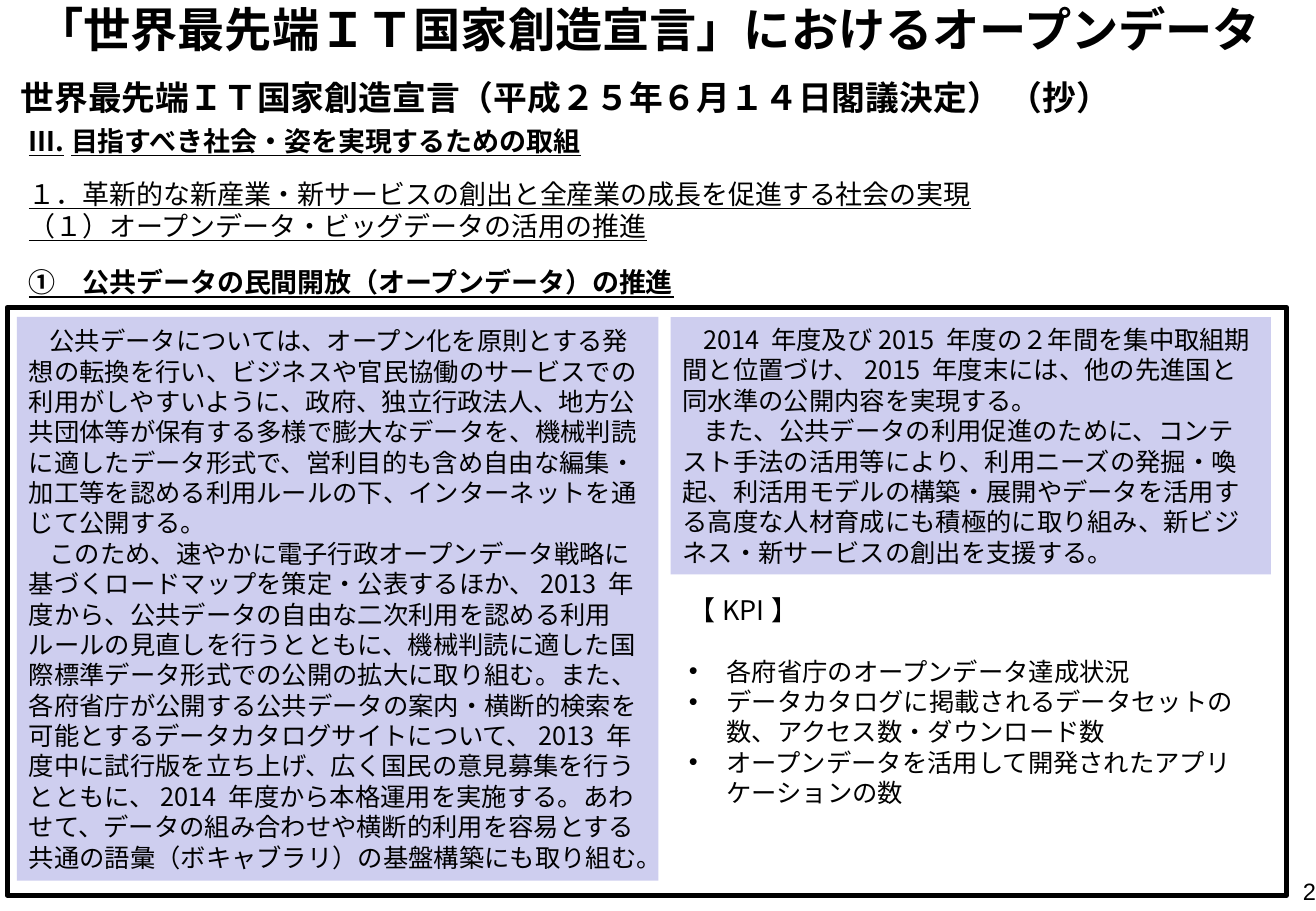
import pptx
import pptx.util
import pptx.dml.color
import pptx.enum.dml
import pptx.enum.lang
import pptx.enum.shapes
import pptx.enum.text
import pptx.oxml
import pptx.oxml.ns

TITLE = [("「世界最先端ＩＴ国家創造宣言」におけるオープンデータ", "title")]
DECISION = [("世界最先端ＩＴ国家創造宣言（平成２５年６月１４日閣議決定） （抄）", "decision")]
HEADINGS = [
    ("Ⅲ.目指すべき社会・姿を実現するための取組", "heading"),
    ("１．革新的な新産業・新サービスの創出と全産業の成長を促進する社会の実現", "section"),
    ("（１）オープンデータ・ビッグデータの活用の推進", "subsection"),
    ("①　公共データの民間開放（オープンデータ）の推進", "topic"),
]
OPENING = [
    ("公共データについては、オープン化を原則とする発想の転換を行い、ビジネスや官民協働のサービスでの利用がしやすいように、政府、独立行政法人、地方公共団体等が保有する多様で膨大なデータを、機械判読に適したデータ形式で、営利目的も含め自由な編集・加工等を認める利用ルールの下、インターネットを通じて公開する。", "passage"),
    ("このため、速やかに電子行政オープンデータ戦略に基づくロードマップを策定・公表するほか、2013 年度から、公共データの自由な二次利用を認める利用ルールの見直しを行うとともに、機械判読に適した国際標準データ形式での公開の拡大に取り組む。また、各府省庁が公開する公共データの案内・横断的検索を可能とするデータカタログサイトについて、2013 年度中に試行版を立ち上げ、広く国民の意見募集を行うとともに、2014 年度から本格運用を実施する。あわせて、データの組み合わせや横断的利用を容易とする共通の語彙（ボキャブラリ）の基盤構築にも取り組む。", "passage"),
]
PERIOD = [
    ("2014 年度及び2015 年度の２年間を集中取組期間と位置づけ、2015 年度末には、他の先進国と同水準の公開内容を実現する。", "passage"),
    ("また、公共データの利用促進のために、コンテスト手法の活用等により、利用ニーズの発掘・喚起、利活用モデルの構築・展開やデータを活用する高度な人材育成にも積極的に取り組み、新ビジネス・新サービスの創出を支援する。", "passage"),
]
KPI = [
    ("【KPI】", "kpi"),
    ("各府省庁のオープンデータ達成状況", "first measure"),
    ("データカタログに掲載されるデータセットの数、アクセス数・ダウンロード数", "measure"),
    ("オープンデータを活用して開発されたアプリケーションの数", "measure"),
]
NUMBER = [("2", "number")]

BLACK = pptx.dml.color.RGBColor(0, 0, 0)
LAVENDER = pptx.dml.color.RGBColor(0xCE, 0xCE, 0xEF)
JAPANESE = "Noto Sans CJK JP"
Pt, Inches = pptx.util.Pt, pptx.util.Inches
ALIGN = pptx.enum.text.PP_ALIGN
ANCHOR = pptx.enum.text.MSO_ANCHOR
FIRST_LINE = (0, 0.17)
HANGING = (0.31, -0.31)

STYLES = {
    "title": dict(size=28, bold=True, align=ALIGN.CENTER),
    "decision": dict(size=20, bold=True, line=24, indent=FIRST_LINE),
    "heading": dict(size=16, bold=True, underline=True, line=19),
    "section": dict(size=16, underline=True, line=19, before=12.4),
    "subsection": dict(size=16, underline=True, line=19),
    "topic": dict(size=16, bold=True, underline=True, line=19, before=14.4),
    "passage": dict(size=15, line=18, indent=FIRST_LINE),
    "kpi": dict(size=16, line=18),
    "first measure": dict(size=15, line=18, before=18, indent=HANGING, bullet=True),
    "measure": dict(size=15, line=18, indent=HANGING, bullet=True),
    "number": dict(size=14, face="Arial", align=ALIGN.RIGHT),
}

PERCENT_PLACES = {
    "title": (0.55, -2.13, 97.41, 10.53),
    "decision": (-0.92, 7.73, 88.09, 5.87),
    "headings": (1.29, 13.07, 97.23, 22.13),
    "frame": (0.55, 33.73, 97.23, 64.53),
    "opening": (1.29, 34.8, 48.75, 61.87),
    "period": (50.97, 34.8, 45.61, 28.27),
    "kpi": (51.43, 64.67, 45.06, 28.27),
    "number": (77.56, 95.6, 23.36, 4.4),
}


def apply(target, values):
    for name, value in values.items():
        setattr(target, name, value)


def place(name):
    sides = (deck.slide_width, deck.slide_height) * 2
    return [round(side * share / 100) for side, share in zip(sides, PERCENT_PLACES[name])]


def write(box, lines, anchor=ANCHOR.TOP):
    frame = box.text_frame
    apply(frame, dict(
        word_wrap=True, auto_size=pptx.enum.text.MSO_AUTO_SIZE.NONE, vertical_anchor=anchor,
        margin_left=Inches(0.1), margin_right=Inches(0.1),
        margin_top=Inches(0.05), margin_bottom=Inches(0.05)))
    for index, (text, style_name) in enumerate(lines):
        style = STYLES[style_name]
        para = frame.add_paragraph() if index else frame.paragraphs[0]
        apply(para, dict(
            alignment=style.get("align", ALIGN.LEFT),
            line_spacing=Pt(style["line"]) if "line" in style else 1.0,
            space_before=Pt(style.get("before", 0)), space_after=Pt(0)))
        span = para.add_run()
        span.text = text
        face = style.get("face", JAPANESE)
        apply(span.font, dict(
            name=face, size=Pt(style["size"]), bold=style.get("bold", False),
            underline=style.get("underline", False),
            language_id=pptx.enum.lang.MSO_LANGUAGE_ID.JAPANESE))
        span.font.color.rgb = BLACK
        latin = span.font._element.find(pptx.oxml.ns.qn("a:latin"))
        east_asian = pptx.oxml.parse_xml(f'<a:ea {pptx.oxml.ns.nsdecls("a")} typeface="{face}"/>')
        latin.addnext(east_asian)
        properties = para._p.get_or_add_pPr()
        left, first = style.get("indent", (0, 0))
        properties.set("marL", str(Inches(left)))
        properties.set("indent", str(Inches(first)))
        mark = 'buChar {} char="•"' if style.get("bullet") else "buNone {}"
        properties.append(pptx.oxml.parse_xml(f'<a:{mark.format(pptx.oxml.ns.nsdecls("a"))}/>'))


def move(box, name):
    apply(box, dict(zip(("left", "top", "width", "height"), place(name))))
    return box


def add_rectangle(name):
    box = page.shapes.add_shape(pptx.enum.shapes.MSO_SHAPE.RECTANGLE, *place(name))
    box.shadow.inherit = False
    return box


deck = pptx.Presentation()
deck.slide_width, deck.slide_height = Inches(10.83), Inches(7.5)
page = deck.slides.add_slide(deck.slide_layouts[1])

write(move(page.shapes.title, "title"), TITLE, ANCHOR.MIDDLE)
write(move(page.placeholders[1], "kpi"), KPI)

for name, lines in (("opening", OPENING), ("period", PERIOD)):
    panel = add_rectangle(name)
    panel.fill.solid()
    panel.fill.fore_color.rgb = LAVENDER
    panel.line.fill.background()
    write(panel, lines, ANCHOR.MIDDLE)

for name, lines in (("decision", DECISION), ("headings", HEADINGS), ("number", NUMBER)):
    write(page.shapes.add_textbox(*place(name)), lines)

border = add_rectangle("frame")
border.fill.background()
border.line.color.rgb = BLACK
border.line.width = Pt(3)

deck.save("out.pptx")
